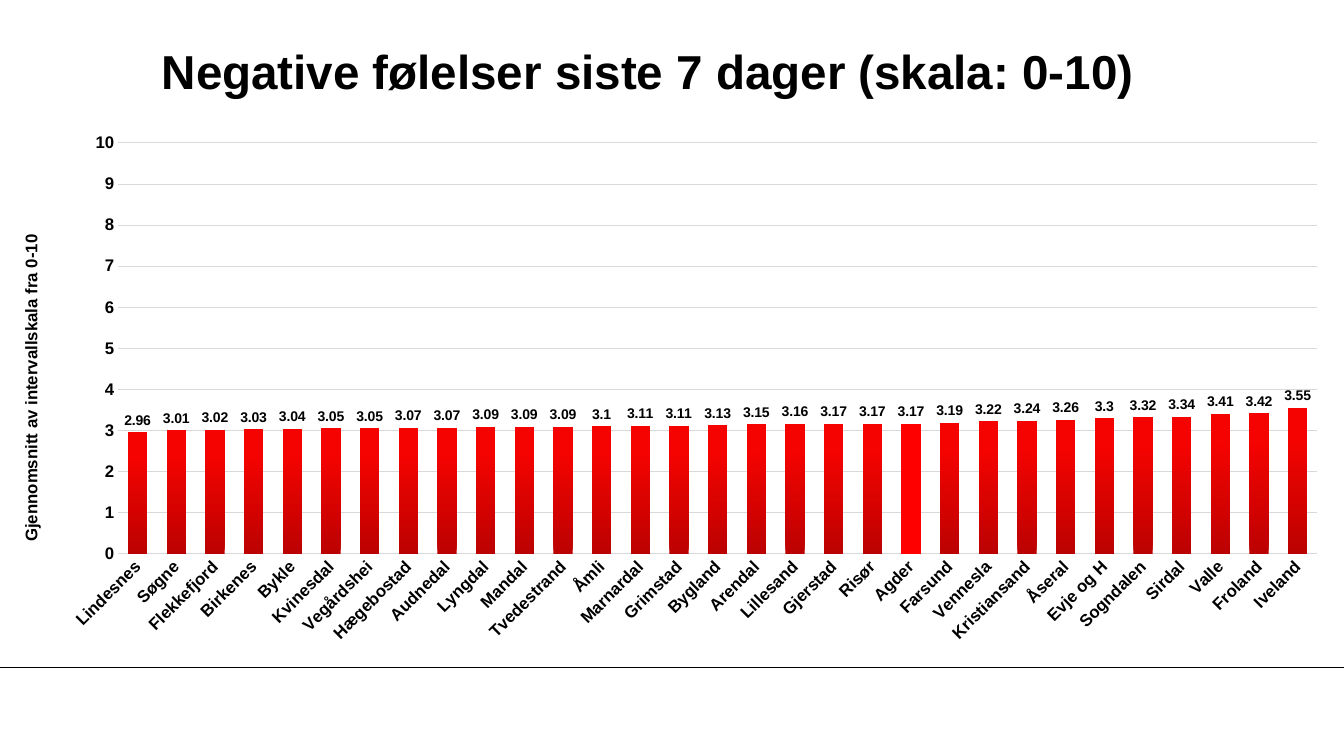
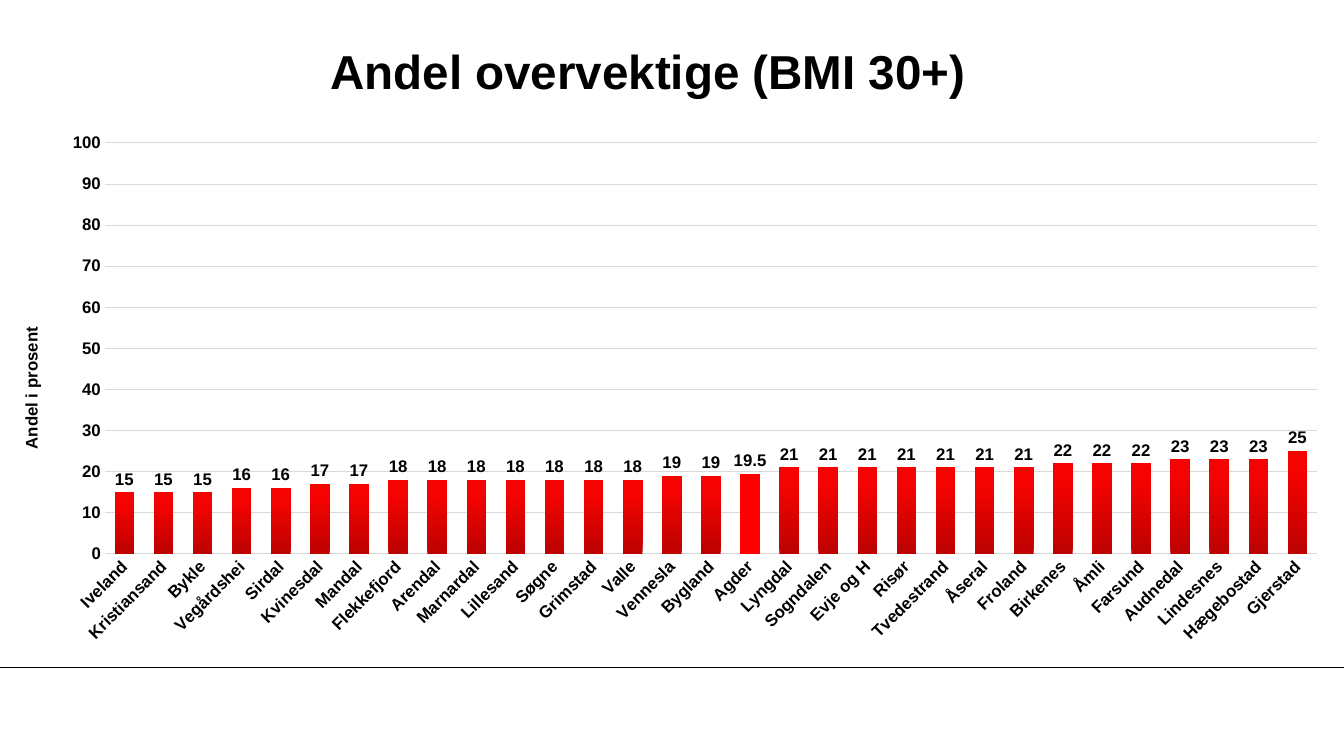
import pptx
import pptx.chart.data
import pptx.dml.color
import pptx.enum.chart
import pptx.enum.shapes
import pptx.enum.text
import pptx.oxml
import pptx.oxml.ns
import pptx.util
from lxml import etree
from pptx.util import Cm

FONT = "Arial"
COLORS = {
    "text": "000000",
    "grid": "D9D9D9",
    "bar_bottom": "BC0200",
    "bar_top": "F40300",
    "region": "FF0000",
}
SLIDE_WIDTH = Cm(33.87)
SLIDE_HEIGHT = Cm(19.05)
REGION = "Agder"

NEGATIVE_FEELINGS = {
    "Lindesnes": 2.96, "Søgne": 3.01, "Flekkefjord": 3.02, "Birkenes": 3.03,
    "Bykle": 3.04, "Kvinesdal": 3.05, "Vegårdshei": 3.05, "Hægebostad": 3.07,
    "Audnedal": 3.07, "Lyngdal": 3.09, "Mandal": 3.09, "Tvedestrand": 3.09,
    "Åmli": 3.1, "Marnardal": 3.11, "Grimstad": 3.11, "Bygland": 3.13,
    "Arendal": 3.15, "Lillesand": 3.16, "Gjerstad": 3.17, "Risør": 3.17,
    "Agder": 3.17, "Farsund": 3.19, "Vennesla": 3.22, "Kristiansand": 3.24,
    "Åseral": 3.26, "Evje og H": 3.3, "Sogndalen": 3.32, "Sirdal": 3.34,
    "Valle": 3.41, "Froland": 3.42, "Iveland": 3.55,
}
OBESITY = {
    "Iveland": 15, "Kristiansand": 15, "Bykle": 15, "Vegårdshei": 16,
    "Sirdal": 16, "Kvinesdal": 17, "Mandal": 17, "Flekkefjord": 18,
    "Arendal": 18, "Marnardal": 18, "Lillesand": 18, "Søgne": 18,
    "Grimstad": 18, "Valle": 18, "Vennesla": 19, "Bygland": 19,
    "Agder": 19.5, "Lyngdal": 21, "Sogndalen": 21, "Evje og H": 21,
    "Risør": 21, "Tvedestrand": 21, "Åseral": 21, "Froland": 21,
    "Birkenes": 22, "Åmli": 22, "Farsund": 22, "Audnedal": 23,
    "Lindesnes": 23, "Hægebostad": 23, "Gjerstad": 25,
}


def rgb(name):
    """Return the named colour."""
    return pptx.dml.color.RGBColor.from_string(COLORS[name])


def style_font(font, size, bold=True):
    """Apply the shared typeface and text colour."""
    font.name = FONT
    font.size = pptx.util.Pt(size)
    font.bold = bold
    font.color.rgb = rgb("text")


def style_line(line, color, width):
    """Set the colour and width of a line."""
    line.color.rgb = rgb(color)
    line.width = pptx.util.Pt(width)


def add_footer_line(slide):
    """Draw the rule across the foot of the slide."""
    connector = slide.shapes.add_connector(
        pptx.enum.shapes.MSO_CONNECTOR.STRAIGHT, 0, Cm(16.81), SLIDE_WIDTH, Cm(16.81))
    style_line(connector.line, "text", 0.75)
    properties = connector._element.spPr
    etree.SubElement(properties, pptx.oxml.ns.qn("a:effectLst"))


def add_title(slide, title):
    """Add the centred slide title."""
    box = slide.shapes.add_textbox(Cm(2.23), Cm(0.81), Cm(28.2), Cm(1.91))
    frame = box.text_frame
    frame.word_wrap = True
    frame.margin_left = frame.margin_right = frame.margin_top = frame.margin_bottom = 0
    frame.vertical_anchor = pptx.enum.text.MSO_ANCHOR.MIDDLE
    frame.text = title
    paragraph = frame.paragraphs[0]
    paragraph.alignment = pptx.enum.text.PP_ALIGN.CENTER
    style_font(paragraph.runs[0].font, 34)


def place_plot(chart, left):
    """Fix the inner plot area as fractions of the chart."""
    plot_area = chart._chartSpace.chart.plotArea
    for layout in plot_area.findall(pptx.oxml.ns.qn("c:layout")):
        plot_area.remove(layout)
    layout = etree.Element(pptx.oxml.ns.qn("c:layout"))
    manual = etree.SubElement(layout, pptx.oxml.ns.qn("c:manualLayout"))
    settings = {
        "layoutTarget": "inner", "xMode": "edge", "yMode": "edge",
        "x": left, "y": 0.04, "w": round(0.98 - left, 3), "h": 0.775,
    }
    for tag, value in settings.items():
        etree.SubElement(manual, pptx.oxml.ns.qn(f"c:{tag}"), val=str(value))
    plot_area.insert(0, layout)


def style_axes(chart, axis_title, maximum):
    """Format both axes, the gridlines and the axis title."""
    for axis in (chart.category_axis, chart.value_axis):
        axis.major_tick_mark = axis.minor_tick_mark = pptx.enum.chart.XL_TICK_MARK.NONE
        style_font(axis.tick_labels.font, 12)
    category_axis, value_axis = chart.category_axis, chart.value_axis
    style_line(category_axis.format.line, "grid", 1)
    category_axis._element.txPr.bodyPr.set("rot", "-2700000")
    value_axis.minimum_scale = 0
    value_axis.maximum_scale = maximum
    value_axis.major_unit = maximum / 10
    value_axis.format.line.fill.background()
    style_line(value_axis.major_gridlines.format.line, "grid", 0.75)
    frame = value_axis.axis_title.text_frame
    frame.text = axis_title
    style_font(frame.paragraphs[0].runs[0].font, 12)


def style_bars(chart, region_index, label_size):
    """Format the bars and labels and highlight the region."""
    plot = chart.plots[0]
    plot.gap_width = 100
    plot.overlap = -24
    plot.vary_by_categories = False
    series = plot.series[0]
    fill = series.format.fill
    fill.gradient()
    fill.gradient_angle = 90
    stops = zip(fill.gradient_stops, (0, 0.8), ("bar_bottom", "bar_top"))
    for stop, position, color in stops:
        stop.position = position
        stop.color.rgb = rgb(color)
    region_fill = series.points[region_index].format.fill
    region_fill.solid()
    region_fill.fore_color.rgb = rgb("region")
    labels = series.data_labels
    labels.show_value = True
    labels.position = pptx.enum.chart.XL_LABEL_POSITION.OUTSIDE_END
    style_font(labels.font, label_size)


def add_bar_chart(slide, values, axis_title, maximum, label_size, plot_left):
    """Add the column chart of municipalities."""
    data = pptx.chart.data.CategoryChartData()
    data.categories = list(values)
    data.add_series("Series 1", list(values.values()))
    chart = slide.shapes.add_chart(
        pptx.enum.chart.XL_CHART_TYPE.COLUMN_CLUSTERED,
        0, Cm(3.07), SLIDE_WIDTH, Cm(13.36), data).chart
    chart.has_title = False
    chart.has_legend = False
    style_font(chart.font, 10, bold=False)
    style_axes(chart, axis_title, maximum)
    style_bars(chart, list(values).index(REGION), label_size)
    place_plot(chart, plot_left)


def add_chart_slide(presentation, title, *chart_settings):
    """Add one slide with title, chart and footer rule."""
    slide = presentation.slides.add_slide(presentation.slide_layouts[6])
    add_footer_line(slide)
    add_title(slide, title)
    add_bar_chart(slide, *chart_settings)


def main():
    """Build and save the presentation."""
    presentation = pptx.Presentation()
    presentation.slide_width = SLIDE_WIDTH
    presentation.slide_height = SLIDE_HEIGHT
    add_chart_slide(presentation, "Negative følelser siste 7 dager (skala: 0-10)",
                    NEGATIVE_FEELINGS, "Gjennomsnitt av intervallskala fra 0-10", 10, 10, 0.088)
    add_chart_slide(presentation, "Andel overvektige (BMI 30+)",
                    OBESITY, "Andel i prosent", 100, 12, 0.078)
    presentation.save("out.pptx")


if __name__ == "__main__":
    main()
